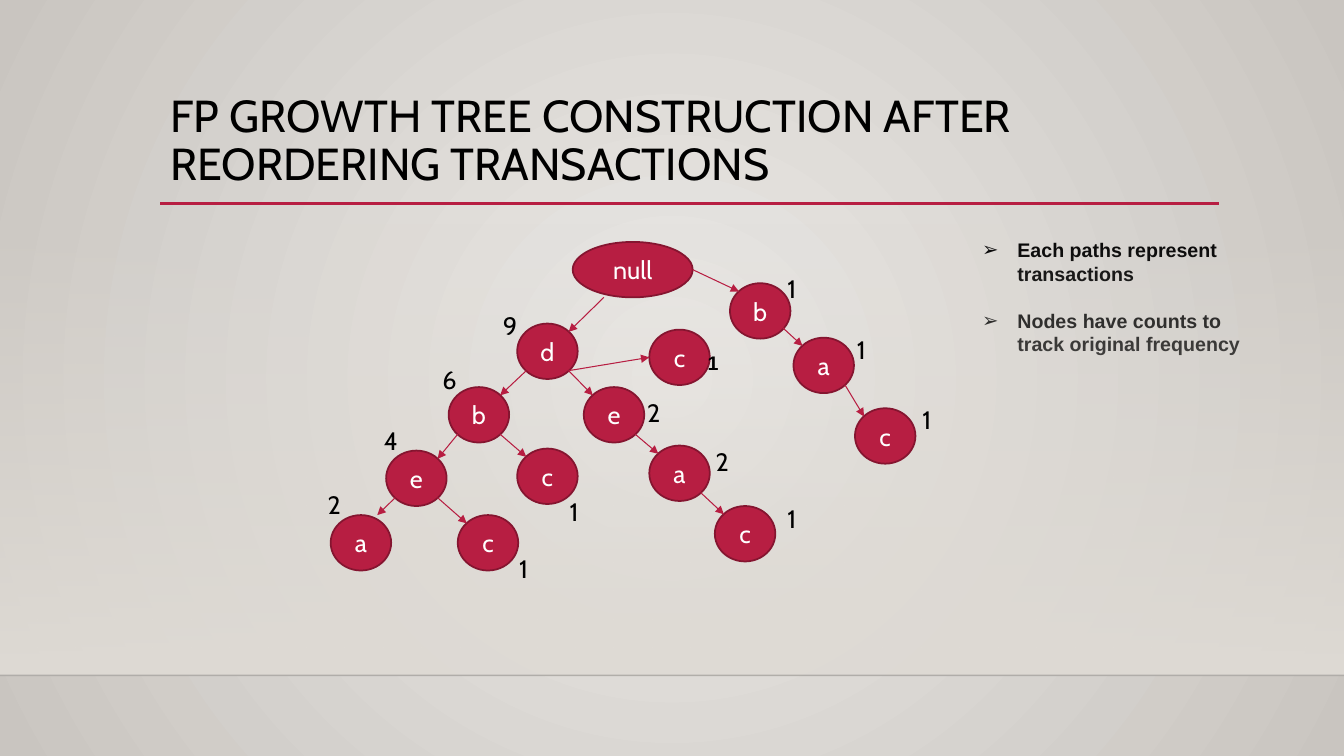
from lxml import etree
from pptx import Presentation
from pptx.dml.color import RGBColor
from pptx.enum.shapes import MSO_CONNECTOR, MSO_SHAPE
from pptx.enum.text import MSO_ANCHOR, MSO_AUTO_SIZE, PP_ALIGN
from pptx.oxml.ns import qn
from pptx.util import Inches, Pt

STRAIGHT = MSO_CONNECTOR.STRAIGHT
RECTANGLE, OVAL = MSO_SHAPE.RECTANGLE, MSO_SHAPE.OVAL
TOP, MIDDLE = MSO_ANCHOR.TOP, MSO_ANCHOR.MIDDLE
LEFT, CENTER = PP_ALIGN.LEFT, PP_ALIGN.CENTER
NO_AUTOFIT = MSO_AUTO_SIZE.NONE

CRIMSON = RGBColor(0xB7, 0x1E, 0x42)
DARK_CRIMSON = RGBColor(0x85, 0x15, 0x30)
WHITE = RGBColor(0xFF, 0xFF, 0xFF)
BLACK = RGBColor(0x00, 0x00, 0x00)
FLOOR_LINE = RGBColor(0x00, 0x00, 0x01)
BACKGROUND_LIGHT = RGBColor(0xEB, 0xE9, 0xE6)
BACKGROUND_DARK = RGBColor(0xC9, 0xC5, 0xC0)
BAND = RGBColor(0xDF, 0xDB, 0xD5)

NODE_WIDTH, ROOT_WIDTH, NODE_HEIGHT = 0.6, 1.19, 0.55
COUNT_WIDTH, COUNT_HEIGHT = 0.42, 0.4

# Node: label, left and top in the tree box, count, left and top of the count
NODES = {
    "null": ("null", 2.68, 0.4, None, 0, 0),
    "d": ("d", 2.13, 1.21, "9", 1.89, 1.03),
    "d-b": ("b", 1.45, 1.84, "6", 1.29, 1.57),
    "d-b-c": ("c", 2.13, 2.45, "1", 2.55, 2.87),
    "d-b-e": ("e", 0.83, 2.47, "4", 0.71, 2.17),
    "d-b-e-a": ("a", 0.28, 3.11, "2", 0.15, 2.81),
    "d-b-e-c": ("c", 1.54, 3.11, "1", 2.05, 3.44),
    "d-e": ("e", 2.79, 1.84, "2", 3.32, 1.89),
    "d-e-a": ("a", 3.44, 2.42, "2", 4, 2.38),
    "d-e-a-c": ("c", 4.09, 3.02, "1", 4.71, 2.94),
    "d-c": ("c", 3.44, 1.27, "1", 3.92, 1.43),
    "b": ("b", 4.24, 0.81, "1", 4.71, 0.66),
    "b-a": ("a", 4.87, 1.35, "1", 5.4, 1.27),
    "b-a-c": ("c", 5.48, 2.05, "1", 6.05, 1.96),
}

# Points on a node as fractions of its width and height
UPPER_LEFT, UPPER_RIGHT = (0.15, 0.15), (0.85, 0.15)
LOWER_LEFT, LOWER_RIGHT = (0.15, 0.85), (0.85, 0.85)
LEFT_SIDE, RIGHT_SIDE = (0, 0.5), (1, 0.5)

EDGES = [
    ("null", (0.26, 1), "d", UPPER_RIGHT),
    ("d", LOWER_LEFT, "d-b", UPPER_RIGHT),
    ("d-b", LOWER_LEFT, "d-b-e", UPPER_RIGHT),
    ("d-b-e", LOWER_LEFT, "d-b-e-a", (0.77, 0)),
    ("d", LOWER_RIGHT, "d-e", UPPER_LEFT),
    ("d-e", LOWER_RIGHT, "d-e-a", UPPER_LEFT),
    ("d-e-a", LOWER_RIGHT, "d-e-a-c", UPPER_LEFT),
    ("d", LOWER_RIGHT, "d-c", LEFT_SIDE),
    ("null", RIGHT_SIDE, "b", UPPER_LEFT),
    ("b", (0.63, 0.56), "b-a", UPPER_LEFT),
    ("b-a", LOWER_RIGHT, "b-a-c", UPPER_LEFT),
    ("d-b-e", LOWER_RIGHT, "d-b-e-c", UPPER_LEFT),
    ("d-b", LOWER_RIGHT, "d-b-c", UPPER_LEFT),
]

NOTES = [
    "Each paths represent transactions",
    "Nodes have counts to track original frequency",
]


def set_font(paragraph, size, color, name="Cabin", bold=False):
    for run in paragraph.runs:
        font = run.font
        font.name, font.size, font.bold = name, Pt(size), bold
        font.color.rgb = color


def place(shape, left, top, width, height):
    shape.left, shape.top = Inches(left), Inches(top)
    shape.width, shape.height = Inches(width), Inches(height)


def set_alpha(color_element, percent):
    etree.SubElement(color_element, qn("a:alpha"), val=str(percent * 1000))


def add_line(slide, start, end, color, width):
    line = slide.shapes.add_connector(STRAIGHT, *(Inches(v) for v in (*start, *end)))
    line.line.color.rgb = color
    line.line.width = Pt(width)
    etree.SubElement(line._element.spPr, qn("a:effectLst"))
    return line


def add_backdrop(slide, width, floor):
    # Round gradient behind everything
    fill = slide.background.fill
    fill.gradient()
    for stop, color in zip(fill.gradient_stops, (BACKGROUND_LIGHT, BACKGROUND_DARK)):
        stop.color.rgb = color
    gradient = next(slide._element.iter(qn("a:gradFill")))
    linear = gradient.find(qn("a:lin"))
    circle = etree.Element(qn("a:path"), path="circle")
    etree.SubElement(circle, qn("a:fillToRect"), l="50000", t="50000", r="50000", b="50000")
    gradient.replace(linear, circle)

    # Band that fades in down to the floor line
    band_top = 2.21
    band = slide.shapes.add_shape(RECTANGLE, 0, Inches(band_top), Inches(width),
                                  Inches(floor - band_top))
    band.shadow.inherit = False
    band.line.fill.background()
    band.fill.gradient()
    band.fill.gradient_angle = 270
    for stop in band.fill.gradient_stops:
        stop.color.rgb = BAND
    set_alpha(next(band._element.spPr.iter(qn("a:srgbClr"))), 0)

    floor_line = add_line(slide, (0, floor), (width, floor), FLOOR_LINE, 1)
    set_alpha(next(floor_line._element.iter(qn("a:srgbClr"))), 20)


def add_title(slide, left, top, width, height):
    title = slide.shapes.title
    place(title, left, top, width, height)
    frame = title.text_frame
    frame.text = "FP GROWTH TREE CONSTRUCTION AFTER REORDERING TRANSACTIONS"
    frame.auto_size, frame.vertical_anchor = NO_AUTOFIT, TOP
    paragraph = frame.paragraphs[0]
    paragraph.alignment, paragraph.line_spacing = LEFT, 0.9
    set_font(paragraph, 32, BLACK)
    rule = top + height - 0.01
    add_line(slide, (left, rule), (left + width, rule), CRIMSON, 2.5)


def node_width(name):
    return ROOT_WIDTH if name == "null" else NODE_WIDTH


def add_tree(slide, left, top):
    def point(name, fraction):
        _, x, y, *_ = NODES[name]
        return (left + x + fraction[0] * node_width(name),
                top + y + fraction[1] * NODE_HEIGHT)

    # Nodes
    for name, (label, x, y, *_) in NODES.items():
        node = slide.shapes.add_shape(OVAL, Inches(left + x), Inches(top + y),
                                      Inches(node_width(name)), Inches(NODE_HEIGHT))
        node.shadow.inherit = False
        node.fill.solid()
        node.fill.fore_color.rgb = CRIMSON
        node.line.color.rgb = DARK_CRIMSON
        node.line.width = Pt(1.25)
        node.text_frame.text = label
        node.text_frame.vertical_anchor = MIDDLE
        node.text_frame.paragraphs[0].alignment = CENTER
        set_font(node.text_frame.paragraphs[0], 18, WHITE)

    # Arrows from parent to child
    for parent, start, child, end in EDGES:
        arrow = add_line(slide, point(parent, start), point(child, end), CRIMSON, 0.75)
        etree.SubElement(arrow.line._get_or_add_ln(), qn("a:tailEnd"), type="triangle")

    # Counts
    for name, (_, _, _, count, x, y) in NODES.items():
        if count:
            box = slide.shapes.add_textbox(Inches(left + x), Inches(top + y),
                                           Inches(COUNT_WIDTH), Inches(COUNT_HEIGHT))
            box.text_frame.word_wrap = True
            box.text_frame.text = count
            style = (14, BLACK, "Arial", True) if name == "d-c" else (18, BLACK)
            set_font(box.text_frame.paragraphs[0], *style)


def add_notes_list(slide, left, top, width, height):
    body = slide.placeholders[1]
    place(body, left, top, width, height)
    frame = body.text_frame
    frame.text = "\n".join(NOTES)
    frame.auto_size, frame.vertical_anchor = NO_AUTOFIT, TOP
    frame.margin_top = frame.margin_bottom = Inches(0.1)
    for index, paragraph in enumerate(frame.paragraphs):
        properties = paragraph._p.get_or_add_pPr()
        properties.set("marL", str(Inches(0.5)))
        properties.set("indent", str(Inches(-0.35)))
        bullet_color = etree.SubElement(properties, qn("a:buClr"))
        etree.SubElement(bullet_color, qn("a:srgbClr"), val=str(BLACK))
        etree.SubElement(properties, qn("a:buFont"), typeface="Arial")
        etree.SubElement(properties, qn("a:buChar"), char="➢")
        paragraph.space_before = Pt(17 if index else 0)
        set_font(paragraph, 14, BLACK, "Arial", True)


def main():
    presentation = Presentation()
    presentation.slide_width, presentation.slide_height = Inches(13.33), Inches(7.5)
    slide = presentation.slides.add_slide(presentation.slide_layouts[1])
    add_backdrop(slide, 13.33, 6.7)
    add_title(slide, 1.59, 0.88, 10.5, 1.15)
    add_tree(slide, 3, 2)
    add_notes_list(slide, 9.49, 2.26, 3.17, 2.78)
    presentation.save("out.pptx")


if __name__ == "__main__":
    main()
